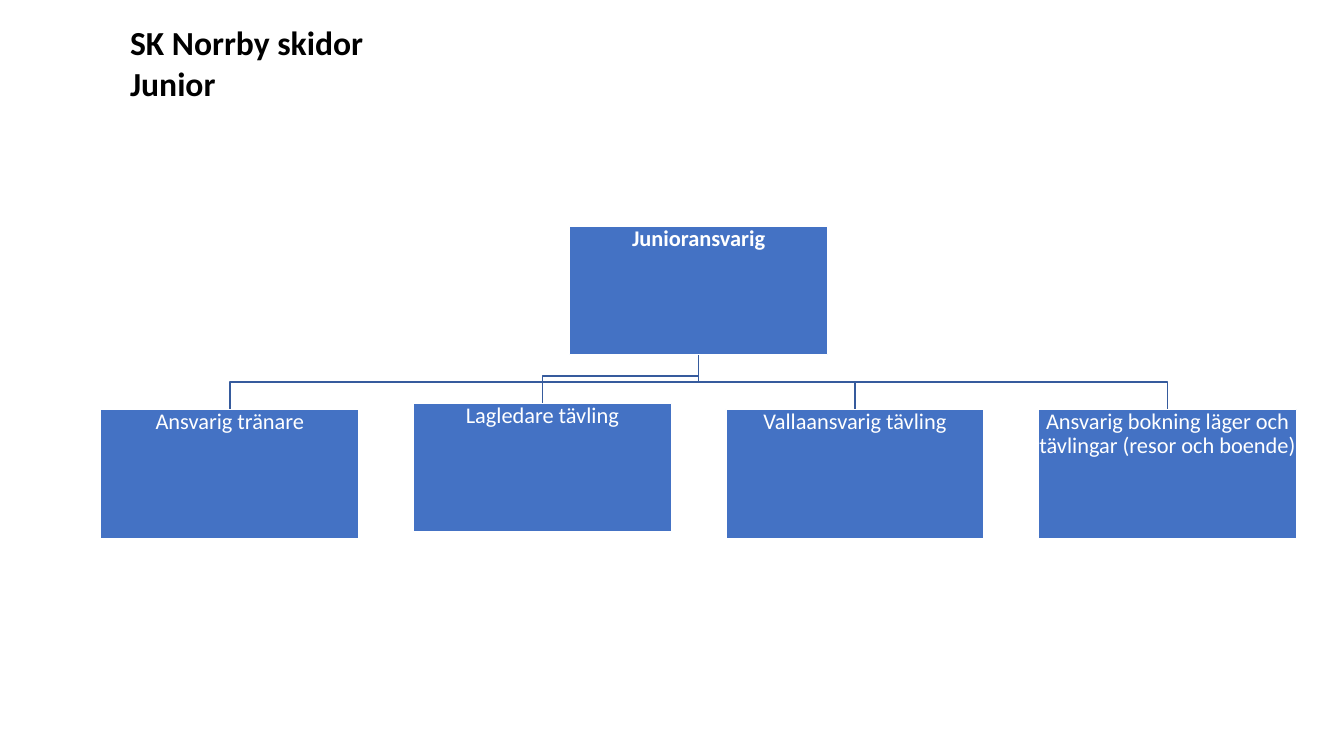
"""Build the organisation chart slide for the junior ski section."""
from dataclasses import dataclass

from pptx import Presentation
from pptx.dml.color import RGBColor
from pptx.enum.shapes import MSO_SHAPE as Shape
from pptx.enum.text import MSO_ANCHOR as Anchor, MSO_AUTO_SIZE as AutoSize, PP_ALIGN as Align
from pptx.slide import Slide
from pptx.text.text import _Paragraph as Paragraph
from pptx.util import Emu, Pt

EMU_PER_PX = 9144
BOX_WIDTH, BOX_HEIGHT = 256, 128
FIRST_LEFT, COLUMN_STEP = 100, 310
ROW_TOP, RAISED_TOP = 406, 400
BEND_GAP = 27


@dataclass(frozen=True)
class Role:
    label: str
    left: int
    top: int
    bold: bool = False

    @property
    def center(self) -> int:
        return self.left + BOX_WIDTH // 2


LEADER = Role("Junioransvarig", 565, 224, bold=True)
MEMBERS = [
    Role(label, FIRST_LEFT + column * COLUMN_STEP, top)
    for column, (label, top) in enumerate([
        ("Ansvarig tränare", ROW_TOP),
        ("Lagledare tävling", RAISED_TOP),
        ("Vallaansvarig tävling", ROW_TOP),
        ("Ansvarig bokning läger och tävlingar (resor och boende)", ROW_TOP),
    ])
]


def px(length: int) -> Emu:
    return Emu(length * EMU_PER_PX)


def color(value: str) -> RGBColor:
    return RGBColor.from_string(value)


def add_run(paragraph: Paragraph, text: str, size: int, hex_color: str, bold: bool) -> None:
    run = paragraph.add_run()
    run.text = text
    run.font.name = "Calibri"
    run.font.size = Pt(size)
    run.font.bold = bold
    run.font.color.rgb = color(hex_color)


def set_title(slide: Slide, lines: list[str]) -> None:
    title = slide.shapes.title
    title.left, title.top, title.width, title.height = px(119), px(17), px(289), px(91)
    frame = title.text_frame
    frame.word_wrap = True
    frame.auto_size = AutoSize.SHAPE_TO_FIT_TEXT
    frame.vertical_anchor = Anchor.TOP
    for index, line in enumerate(lines):
        paragraph = frame.add_paragraph() if index else frame.paragraphs[0]
        paragraph.alignment = Align.LEFT
        add_run(paragraph, line, 24, "000000", True)


def add_link(slide: Slide, parent: Role, child: Role) -> None:
    bend = child.top - BEND_GAP
    builder = slide.shapes.build_freeform(parent.center, parent.top + BOX_HEIGHT, scale=EMU_PER_PX)
    builder.add_line_segments(
        [(parent.center, bend), (child.center, bend), (child.center, child.top)], close=False
    )
    link = builder.convert_to_shape()
    link.shadow.inherit = False
    link.fill.background()
    link.line.color.rgb = color("365B9D")
    link.line.width = Pt(1)


def add_box(slide: Slide, role: Role) -> None:
    box = slide.shapes.add_shape(
        Shape.RECTANGLE, px(role.left), px(role.top), px(BOX_WIDTH), px(BOX_HEIGHT)
    )
    box.shadow.inherit = False
    box.fill.solid()
    box.fill.fore_color.rgb = color("4472C4")
    box.line.color.rgb = color("FFFFFF")
    box.line.width = Pt(1)
    frame = box.text_frame
    frame.word_wrap = True
    frame.vertical_anchor = Anchor.TOP
    frame.margin_left = frame.margin_right = frame.margin_top = frame.margin_bottom = px(1)
    paragraph = frame.paragraphs[0]
    paragraph.alignment = Align.CENTER
    paragraph.line_spacing = 0.9
    add_run(paragraph, role.label, 16, "FFFFFF", role.bold)


def main() -> None:
    presentation = Presentation()
    presentation.slide_width, presentation.slide_height = px(1333), px(750)
    slide = presentation.slides.add_slide(presentation.slide_layouts.get_by_name("Title Only"))
    set_title(slide, ["SK Norrby skidor", "Junior"])
    for member in reversed(MEMBERS):
        add_link(slide, LEADER, member)
    for role in [LEADER, *MEMBERS]:
        add_box(slide, role)
    presentation.save("out.pptx")


if __name__ == "__main__":
    main()
